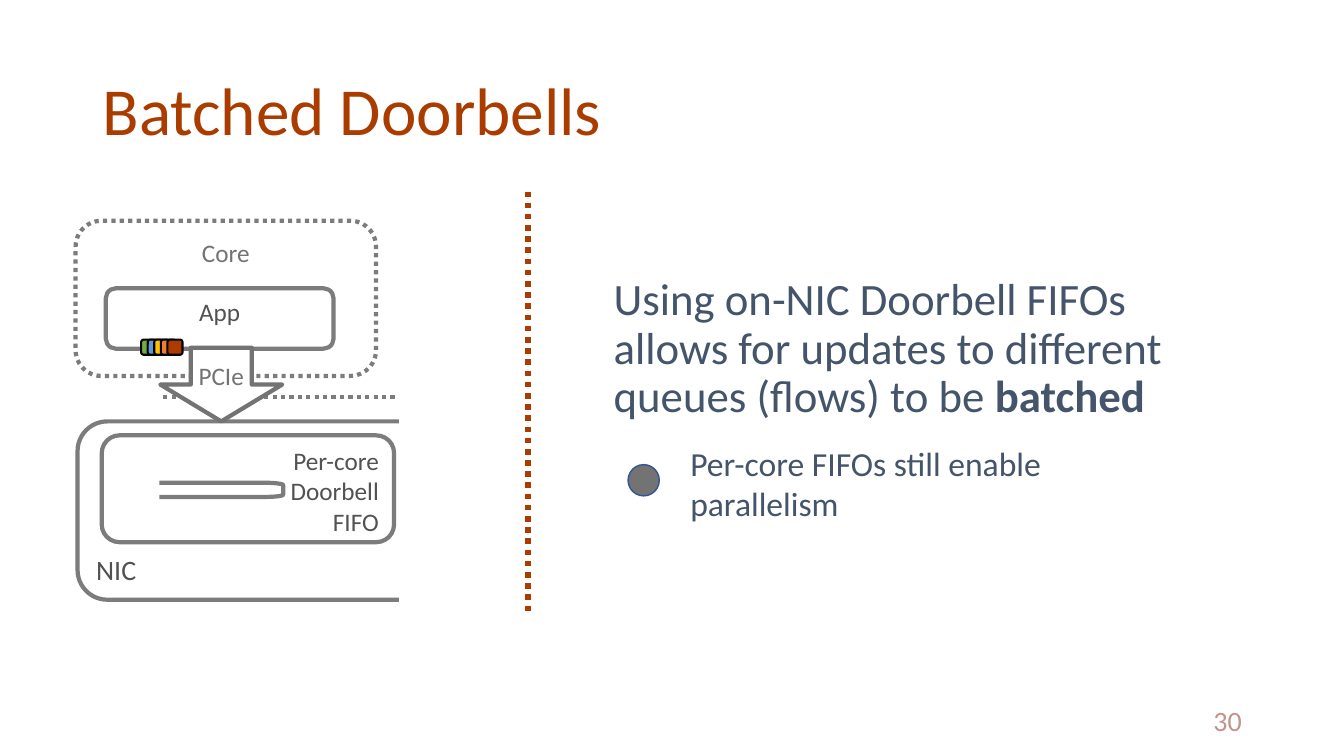
from dataclasses import dataclass
from math import cos, pi, sin

from lxml.etree import SubElement
from pptx import Presentation
from pptx.dml.color import RGBColor
from pptx.enum.dml import MSO_LINE
from pptx.enum.shapes import MSO_CONNECTOR, MSO_SHAPE as Preset
from pptx.enum.text import MSO_ANCHOR as Anchor, PP_ALIGN as Align
from pptx.oxml.ns import qn
from pptx.util import Pt

FONT = "Calibri"
WHITE = RGBColor(0xFF, 0xFF, 0xFF)
BLACK = RGBColor(0x00, 0x00, 0x00)
RUST = RGBColor(0xAB, 0x3C, 0x00)
PINK = RGBColor(0xC5, 0x92, 0x8C)
SLATE = RGBColor(0x44, 0x54, 0x6A)
OUTLINE = RGBColor(0x7C, 0x7C, 0x7C)
GREY = RGBColor(0x73, 0x73, 0x73)
DARK_GREY = RGBColor(0x52, 0x52, 0x52)
BULLET_EDGE = RGBColor(0x32, 0x54, 0x91)
DOORBELL_COLORS = (
    RGBColor(0x70, 0xAD, 0x47),
    RGBColor(0x5B, 0x9B, 0xD5),
    RGBColor(0xFF, 0xC0, 0x00),
    RGBColor(0xED, 0x7D, 0x31),
    RUST,
)


@dataclass(frozen=True)
class Area:
    left: float
    top: float
    width: float
    height: float

    def emu(self) -> tuple:
        return Pt(self.left), Pt(self.top), Pt(self.width), Pt(self.height)


@dataclass(frozen=True)
class Label:
    text: str
    size: float
    color: RGBColor
    align: Align = Align.LEFT
    anchor: Anchor = Anchor.TOP
    wrap: bool = True
    spacing: float = 1.0


@dataclass(frozen=True)
class Box:
    area: Area
    preset: Preset = Preset.ROUNDED_RECTANGLE
    fill: RGBColor | None = WHITE
    line: RGBColor | None = OUTLINE
    weight: float = 3
    dotted: bool = False
    label: Label | None = None


def write(shape, label: Label) -> None:
    frame = shape.text_frame
    frame.text = label.text
    frame.word_wrap = label.wrap
    frame.vertical_anchor = label.anchor
    for paragraph in frame.paragraphs:
        paragraph.alignment = label.align
        paragraph.line_spacing = label.spacing
        for run in paragraph.runs:
            run.font.name = FONT
            run.font.size = Pt(label.size)
            run.font.color.rgb = label.color


def add_label(slide, area: Area, label: Label):
    textbox = slide.shapes.add_textbox(*area.emu())
    write(textbox, label)
    return textbox


def paint(shape, box: Box) -> None:
    shape.shadow.inherit = False
    if box.fill is None:
        shape.fill.background()
    else:
        shape.fill.solid()
        shape.fill.fore_color.rgb = box.fill
    if box.line is None:
        shape.line.fill.background()
    else:
        shape.line.color.rgb = box.line
        shape.line.width = Pt(box.weight)
    if box.dotted:
        shape.line.dash_style = MSO_LINE.ROUND_DOT


def add_box(slide, box: Box) -> None:
    shape = slide.shapes.add_shape(box.preset, *box.area.emu())
    paint(shape, box)
    if box.label:
        write(shape, box.label)


def add_dotted_line(slide, start: tuple[float, float], end: tuple[float, float],
                    color: RGBColor, weight: float) -> None:
    line = slide.shapes.add_connector(MSO_CONNECTOR.STRAIGHT, *map(Pt, start + end))
    line.line.color.rgb = color
    line.line.width = Pt(weight)
    line.line.dash_style = MSO_LINE.ROUND_DOT
    SubElement(line._element.spPr, qn("a:effectLst"))


def add_queue(slide, area: Area, corner_x: float, corner_y: float, steps: int = 6) -> None:
    """Draw a bar whose right-hand corners are flat quarter ellipses."""
    right, bottom = area.left + area.width, area.top + area.height
    angles = [pi / 2 * step / steps for step in range(steps + 1)]
    upper = [(right - corner_x * (1 - sin(a)), area.top + corner_y * (1 - cos(a)))
             for a in angles]
    lower = [(x, area.top + bottom - y) for x, y in reversed(upper)]
    outline = upper + lower + [(area.left, bottom)]
    builder = slide.shapes.build_freeform(Pt(area.left), Pt(area.top))
    builder.add_line_segments([(Pt(x), Pt(y)) for x, y in outline], close=True)
    paint(builder.convert_to_shape(), Box(area))


CORE_PARTS = (
    # NIC and its FIFO
    Box(Area(55.4, 301, 262.8, 127.4),
        label=Label("NIC", 20, DARK_GREY, anchor=Anchor.BOTTOM)),
    Box(Area(72.7, 311, 208.8, 76.3),
        label=Label("Per-core\nDoorbell\nFIFO", 18, DARK_GREY, Align.RIGHT)),
    # Core and its app
    Box(Area(75.6, 205.9, 162.7, 43.2),
        label=Label("App", 18, DARK_GREY, Align.CENTER)),
    Box(Area(54, 157.7, 214.6, 110.9), fill=None, dotted=True),
    # White strip that opens the right side of the NIC
    Box(Area(285.1, 133.2, 36.7, 327.6), Preset.RECTANGLE, line=None),
    Box(Area(114.5, 248.4, 87.1, 52.6), Preset.DOWN_ARROW, line=GREY,
        label=Label("PCIe", 18, GREY, Align.CENTER, Anchor.MIDDLE, wrap=False)),
)


def main() -> None:
    deck = Presentation()
    deck.slide_width, deck.slide_height = Pt(960), Pt(540)
    slide = deck.slides.add_slide(deck.slide_layouts[5])

    # Title and page number
    title = slide.shapes.title
    title.left, title.top, title.width, title.height = Area(66.2, 28.8, 828, 104.4).emu()
    write(title, Label("Batched Doorbells", 48, RUST, anchor=Anchor.MIDDLE, spacing=0.9))
    add_label(slide, Area(678.2, 500.4, 216, 28.8),
              Label("30", 20, PINK, Align.RIGHT, Anchor.MIDDLE))

    # Message on the right
    message = add_label(
        slide, Area(431.3, 194.4, 463, 118.8),
        Label("Using on-NIC Doorbell FIFOs allows for updates to different "
              "queues (flows) to be ", 32, SLATE, spacing=0.9))
    paragraph = message.text_frame.paragraphs[0]
    paragraph.space_before = Pt(10)
    emphasis = paragraph.add_run()
    emphasis.text = "batched"
    emphasis.font.name, emphasis.font.size, emphasis.font.bold = FONT, Pt(32), True
    emphasis.font.color.rgb = SLATE
    add_box(slide, Box(Area(448.6, 331.9, 22.3, 22.3), Preset.OVAL, GREY, BULLET_EDGE, 1))
    add_label(slide, Area(486, 312.5, 329, 65.5),
              Label("Per-core FIFOs still enable parallelism", 24, SLATE))

    # Dotted dividers
    add_dotted_line(slide, (377.3, 136.8), (377.3, 439.2), RUST, 4)
    add_dotted_line(slide, (116.6, 283.7), (296.6, 283.7), OUTLINE, 3)

    # Core, PCIe and NIC diagram
    for part in CORE_PARTS:
        add_box(slide, part)
    add_label(slide, Area(79.9, 166.3, 162.7, 28.8), Label("Core", 18, GREY, Align.CENTER))

    # Queue, open on its left end
    add_queue(slide, Area(104.4, 344.9, 97.9, 10.1), corner_x=13, corner_y=1.6)
    add_box(slide, Box(Area(99.4, 331.2, 14.4, 30.2), Preset.RECTANGLE, line=None))

    # Batch of doorbells
    for index, color in enumerate(DOORBELL_COLORS):
        add_box(slide, Box(Area(100.8 + 4.7 * index, 242.6, 10.8, 10.8),
                           fill=color, line=BLACK, weight=1.5))

    deck.save("out.pptx")


if __name__ == "__main__":
    main()
